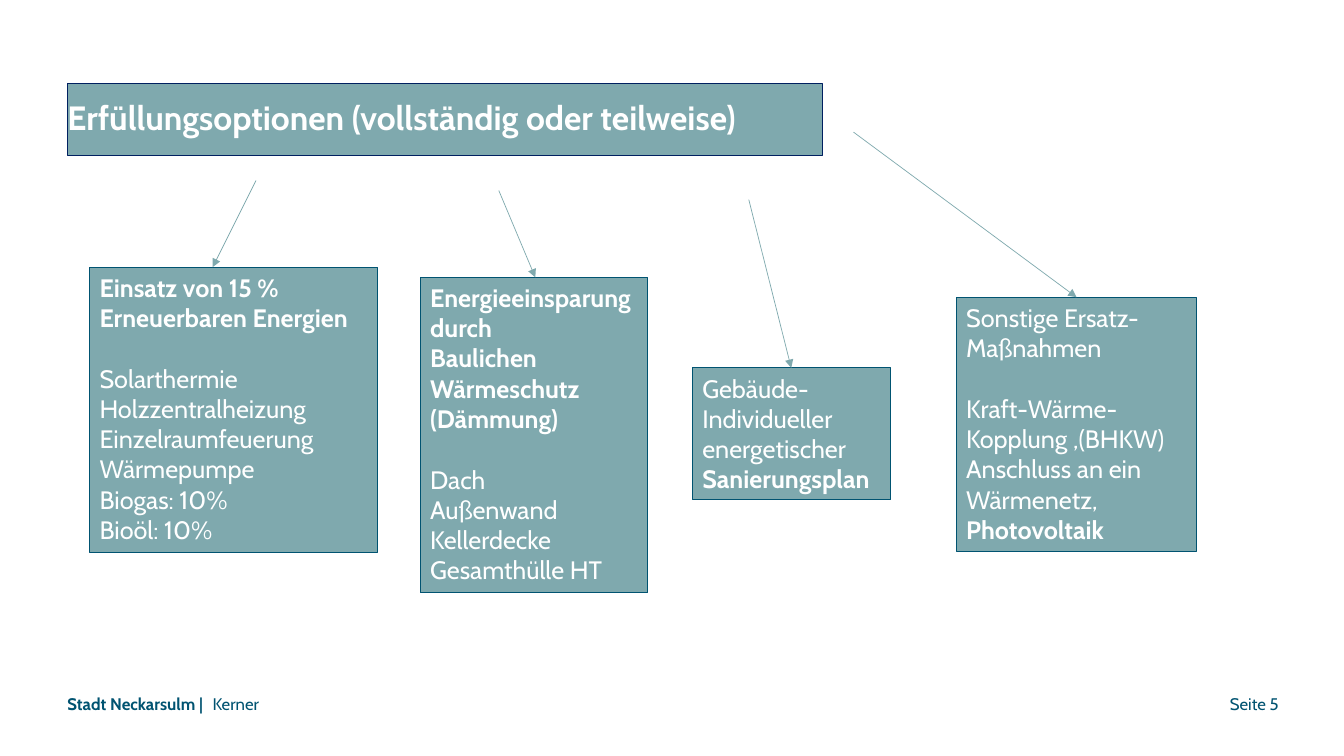
import pptx
import pptx.dml.color
import pptx.enum.shapes
import pptx.enum.text
import pptx.oxml
import pptx.oxml.ns
import pptx.util

Cm = pptx.util.Cm
Pt = pptx.util.Pt
ANCHOR = pptx.enum.text.MSO_ANCHOR
ALIGN = pptx.enum.text.PP_ALIGN

TEAL, PETROL, NAVY, WHITE = "7FA9AE", "005371", "002060", "FFFFFF"


def rgb(value):
    return pptx.dml.color.RGBColor.from_string(value)


class SlideBuilder:
    font = "Cabin"
    line_gap = 21.75  # height of one 18 pt line

    def __init__(self, slide):
        self.slide = slide

    def add_run(self, p, text, size, color, bold):
        r = p.add_run()
        r.text = text
        r.font.name = self.font
        r.font.size = Pt(size)
        r.font.bold = bold
        r.font.color.rgb = rgb(color)

    def no_margins(self, tf):
        tf.margin_left = tf.margin_right = tf.margin_top = tf.margin_bottom = 0
        tf.vertical_anchor = ANCHOR.MIDDLE

    def label(self, left, width, text, bold=False, align=ALIGN.LEFT):
        sp = self.slide.shapes.add_textbox(Cm(left), Cm(17.42), Cm(width), Cm(0.61))
        tf = sp.text_frame
        tf.word_wrap = True
        self.no_margins(tf)
        p = tf.paragraphs[0]
        p.alignment = align
        self.add_run(p, text, 12, PETROL, bold)

    def box(self, left, top, width, height, line):
        sp = self.slide.shapes.add_shape(
            pptx.enum.shapes.MSO_SHAPE.RECTANGLE,
            Cm(left), Cm(top), Cm(width), Cm(height))
        sp.shadow.inherit = False
        sp.fill.solid()
        sp.fill.fore_color.rgb = rgb(TEAL)
        sp.line.color.rgb = rgb(line)
        sp.line.width = Pt(0.75)
        tf = sp.text_frame
        tf.word_wrap = True
        return tf

    def title(self, left, top, width, height, text):
        tf = self.box(left, top, width, height, NAVY)
        self.no_margins(tf)
        p = tf.paragraphs[0]
        p.alignment = ALIGN.LEFT
        p.line_spacing = 0.9
        self.add_run(p, text, 24, WHITE, True)

    def option(self, left, top, width, height, groups):
        """Each group is a list of (text, bold); a line's gap parts the groups."""
        tf = self.box(left, top, width, height, PETROL)
        tf.vertical_anchor = ANCHOR.TOP
        p = None
        for group in groups:
            for i, (text, bold) in enumerate(group):
                first = p is None
                p = tf.paragraphs[0] if first else tf.add_paragraph()
                p.alignment = ALIGN.LEFT
                if i == 0 and not first:
                    p.space_before = Pt(self.line_gap)
                self.add_run(p, text, 18, WHITE, bold)

    def arrow(self, x1, y1, x2, y2):
        cxn = self.slide.shapes.add_connector(
            pptx.enum.shapes.MSO_CONNECTOR.STRAIGHT, Cm(x1), Cm(y1), Cm(x2), Cm(y2))
        cxn.line.color.rgb = rgb(TEAL)
        cxn.line.width = Pt(0.5)
        ns = pptx.oxml.ns.nsdecls("a")
        ln = cxn.line._get_or_add_ln()
        ln.append(pptx.oxml.parse_xml(f'<a:tailEnd {ns} type="triangle"/>'))
        cxn._element.spPr.append(pptx.oxml.parse_xml(f"<a:effectLst {ns}/>"))


def lines(bold, *texts):
    return [(text, bold) for text in texts]


# Box (left, top, width, height), arrow start, arrow end x, text groups
OPTIONS = [
    ((2.26, 6.73, 7.26, 7.19), (6.45, 4.55), 5.36, [
        lines(True, "Einsatz von 15 %", "Erneuerbaren Energien"),
        lines(False, "Solarthermie", "Holzzentralheizung", "Einzelraumfeuerung",
              "Wärmepumpe", "Biogas: 10%", "Bioöl: 10%")]),
    ((10.59, 6.99, 5.74, 7.95), (12.57, 4.8), 13.49, [
        lines(True, "Energieeinsparung durch", "Baulichen", "Wärmeschutz",
              "(Dämmung)"),
        lines(False, "Dach", "Außenwand", "Kellerdecke", "Gesamthülle HT")]),
    ((17.45, 9.27, 5, 3.33), (18.87, 5.03), 19.94, [
        lines(False, "Gebäude-", "Individueller", "energetischer")
        + lines(True, "Sanierungsplan")]),
    ((24.1, 7.49, 6.05, 6.4), (21.51, 3.33), 27.13, [
        lines(False, "Sonstige Ersatz-", "Maßnahmen"),
        lines(False, "Kraft-Wärme-", "Kopplung ,(BHKW)",
              "Anschluss an ein Wärmenetz,") + lines(True, "Photovoltaik")]),
]


def main():
    prs = pptx.Presentation()
    prs.slide_width, prs.slide_height = Cm(33.87), Cm(19.05)
    s = SlideBuilder(prs.slides.add_slide(prs.slide_layouts[6]))

    # Title
    s.title(1.7, 2.11, 19.02, 1.8, "Erfüllungsoptionen (vollständig oder teilweise)")

    # Options with their arrows
    for frame, start, end_x, groups in OPTIONS:
        s.option(*frame, groups)
        s.arrow(*start, end_x, frame[1])

    # Footer
    s.label(1.7, 3.6, "Stadt Neckarsulm |", bold=True)
    s.label(5.36, 17.17, "Kerner")
    s.label(24.36, 7.87, "Seite 5", align=ALIGN.RIGHT)

    prs.save("out.pptx")


if __name__ == "__main__":
    main()
